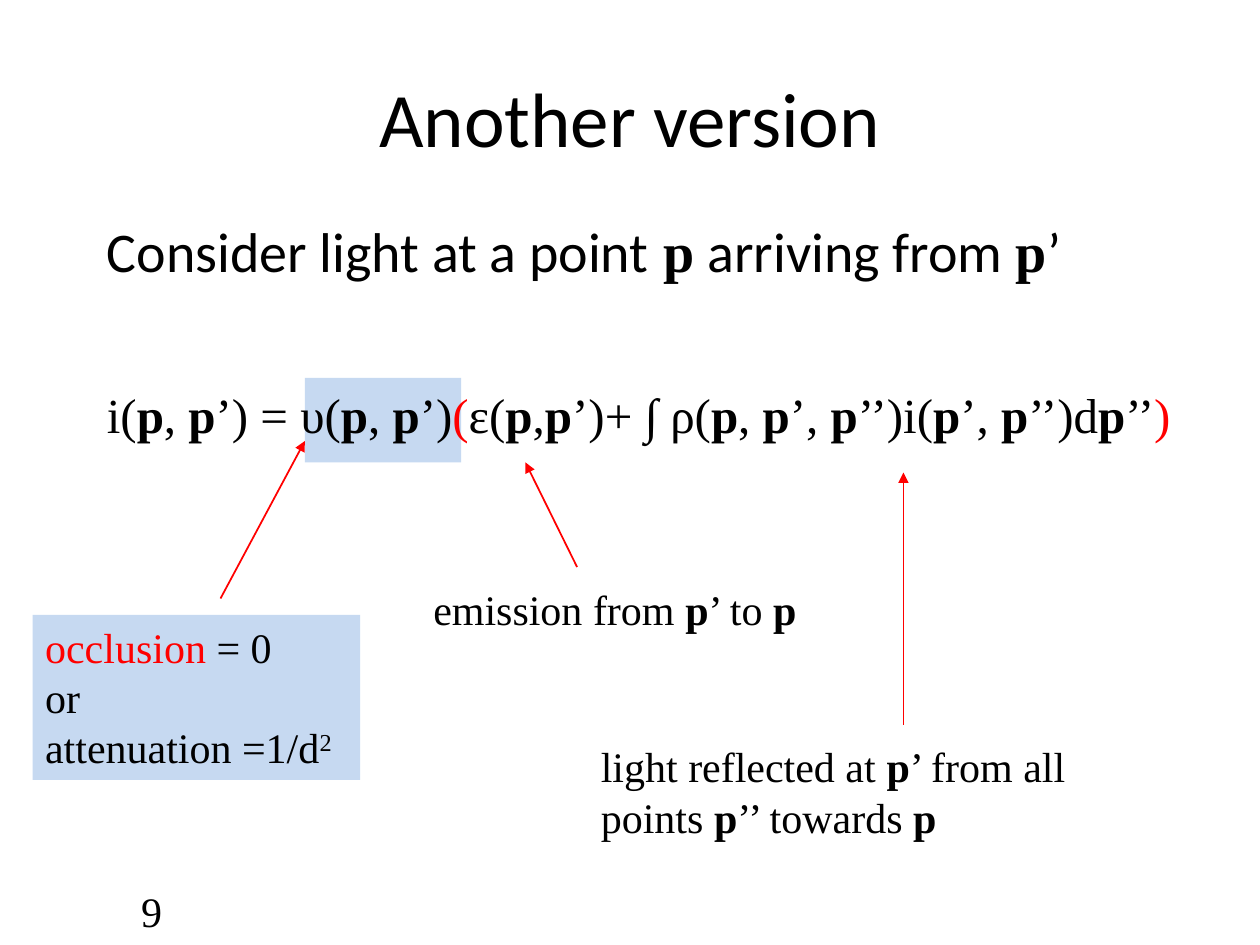
from itertools import groupby

from lxml.etree import SubElement
from pptx import Presentation
from pptx.dml.color import RGBColor
from pptx.enum.shapes import MSO_CONNECTOR as Connector, MSO_SHAPE as Shape
from pptx.enum.text import MSO_ANCHOR as Anchor, PP_ALIGN as Align
from pptx.oxml.ns import qn
from pptx.util import Inches, Pt

BLACK = RGBColor(0x00, 0x00, 0x00)
RED = RGBColor(0xFF, 0x00, 0x00)
PALE_BLUE = RGBColor(0xC6, 0xD9, 0xF1)
SANS = "Calibri"
SERIF = "Times New Roman"
BOLD, COLOR, RAISED = "*", "~", "^"


def styled_pieces(markup):
    active = frozenset()
    marked = []
    for letter in markup:
        if letter in (BOLD, COLOR, RAISED):
            active = active ^ {letter}
        else:
            marked.append((active, letter))
    for styles, group in groupby(marked, key=lambda item: item[0]):
        yield styles, "".join(letter for _, letter in group)


def fill_paragraph(para, markup, size, font):
    for styles, text in styled_pieces(markup):
        span = para.add_run()
        span.text = text
        span.font.size = Pt(size)
        span.font.name = SERIF if BOLD in styles else font
        span.font.bold = BOLD in styles
        span.font.color.rgb = RED if COLOR in styles else BLACK
        if RAISED in styles:
            span.font._element.set("baseline", "30000")


def add_text(page, area, lines, size, font=SERIF, wrap=False,
             align=Align.LEFT, anchor=Anchor.TOP):
    box = page.shapes.add_textbox(*map(Inches, area))
    frame = box.text_frame
    frame.word_wrap = wrap
    frame.vertical_anchor = anchor
    for index, markup in enumerate(lines):
        para = frame.add_paragraph() if index else frame.paragraphs[0]
        para.alignment = align
        fill_paragraph(para, markup, size, font)
    return box


def paint(shape, color):
    shape.fill.solid()
    shape.fill.fore_color.rgb = color


def add_highlight(page, area):
    highlight = page.shapes.add_shape(Shape.RECTANGLE, *map(Inches, area))
    paint(highlight, PALE_BLUE)
    highlight.line.fill.background()
    highlight.shadow.inherit = False


def add_arrow(page, start, end):
    arrow = page.shapes.add_connector(Connector.STRAIGHT, *map(Inches, start + end))
    arrow.line.color.rgb = RED
    arrow.line.width = Pt(1)
    SubElement(arrow.line._get_or_add_ln(), qn("a:tailEnd"), type="triangle")
    SubElement(arrow._element.spPr, qn("a:effectLst"))


def main():
    deck = Presentation()
    deck.slide_width, deck.slide_height = Inches(10), Inches(7.5)
    page = deck.slides.add_slide(deck.slide_layouts[6])

    add_highlight(page, (2.42, 3, 1.24, 0.67))
    number = add_text(page, (0.5, 7.08, 2.33, 0.3), ["9"], 24,
                      wrap=True, anchor=Anchor.MIDDLE)
    number.text_frame.margin_left = Inches(0.62)
    add_text(page, (0.5, 0.3, 9, 1.25), ["Another version"], 44, SANS,
             wrap=True, align=Align.CENTER, anchor=Anchor.MIDDLE)
    add_text(page, (0.75, 1.67, 8.5, 0.83),
             ["Consider light at a point* p* arriving from *p*’"], 32, SANS, wrap=True)
    add_text(page, (0.75, 3, 8.76, 0.57),
             ["i(*p*, *p*’) = υ(*p*, *p*’)~(~ε(*p*,*p*’)+ *∫ *"
              "ρ(*p*, *p*’, *p*’’)i(*p*’, *p*’’)d*p*’’~)~"], 28)

    add_arrow(page, (1.75, 4.75), (2.42, 3.5))
    occlusion = add_text(page, (0.26, 4.88, 2.6, 1.31),
                         ["~occlusion~ = 0", "or", "attenuation =1/d^2^"], 24)
    paint(occlusion, PALE_BLUE)

    add_arrow(page, (4.58, 4.5), (4.17, 3.67))
    add_text(page, (3.34, 4.58, 3.11, 0.5), ["emission from *p*’ to *p*"], 24)

    add_arrow(page, (7.17, 5.75), (7.17, 3.75))
    add_text(page, (4.67, 5.83, 3.99, 0.9),
             ["light reflected at *p*’ from all", "points *p*’’ towards *p*"], 24)

    deck.save("out.pptx")


if __name__ == "__main__":
    main()
